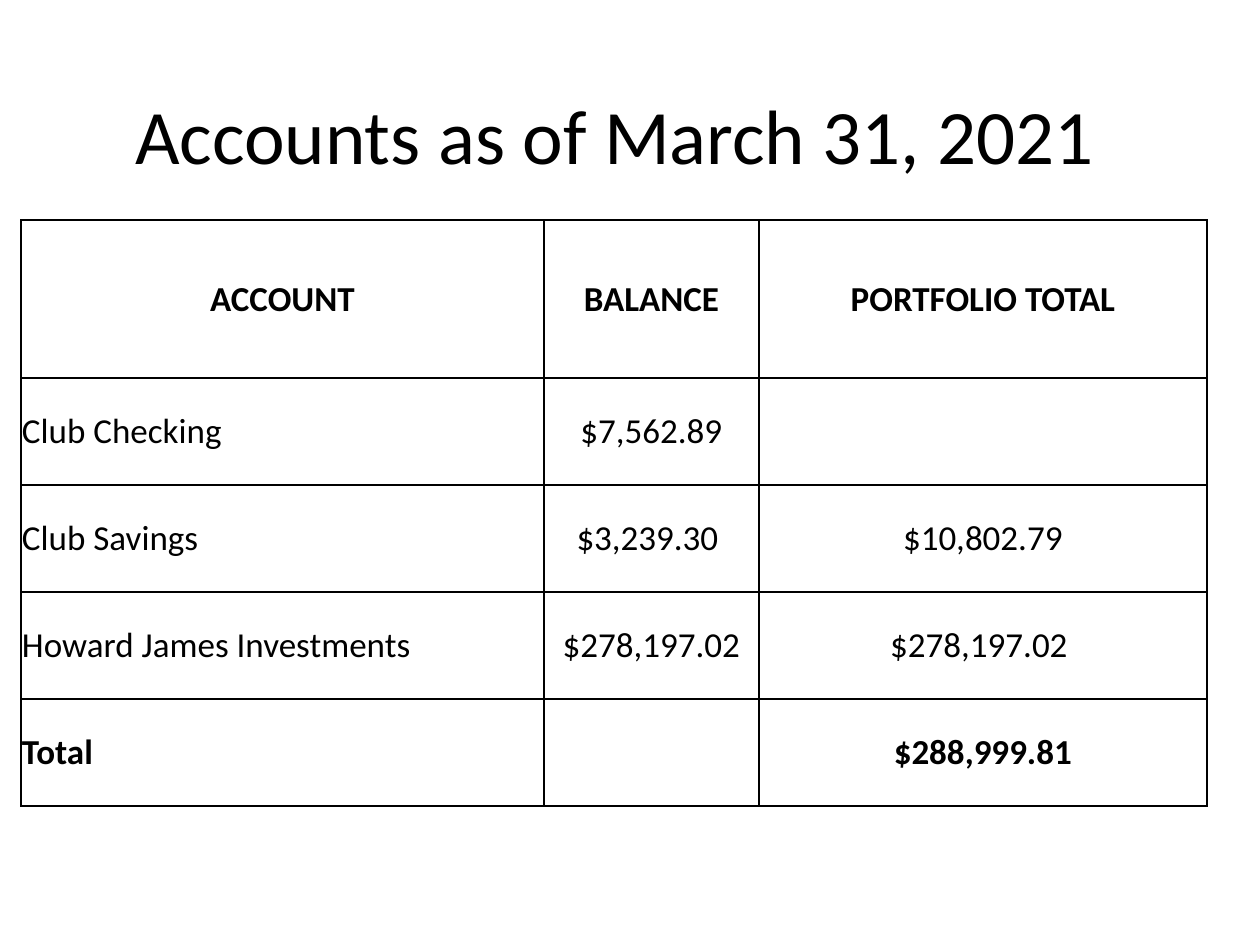
from lxml import etree
from pptx import Presentation
from pptx.dml.color import RGBColor
from pptx.enum.text import MSO_ANCHOR, PP_ALIGN
from pptx.oxml.ns import qn
from pptx.util import Emu, Pt

BLACK = RGBColor(0, 0, 0)
FONT = "Calibri"
MIDDLE = MSO_ANCHOR.MIDDLE
LEFT, CENTER = PP_ALIGN.LEFT, PP_ALIGN.CENTER


def px(n):
    return Emu(round(n * 914400 / 126))


def style(para, size, bold, align):
    para.alignment = align
    para.font.name = FONT
    para.font.size = Pt(size)
    para.font.bold = bold
    para.font.color.rgb = BLACK


prs = Presentation()
prs.slide_width, prs.slide_height = px(1260), px(945)
slide = prs.slides.add_slide(prs.slide_layouts[6])

# Title
box = slide.shapes.add_textbox(px(33), px(47), px(1164), px(173))
frame = box.text_frame
frame.word_wrap = True
frame.vertical_anchor = MIDDLE
frame.text = "Accounts as of March 31, 2021"
style(frame.paragraphs[0], 44, False, CENTER)

# Table grid
ROWS = [
    ("ACCOUNT", "BALANCE", "PORTFOLIO TOTAL"),
    ("Club Checking", "$7,562.89", ""),
    ("Club Savings", "$3,239.30 ", "$10,802.79"),
    ("Howard James Investments", "$278,197.02", "$278,197.02 "),
    ("Total", "", "$288,999.81"),
]
WIDTHS = [523, 215, 448]
HEIGHTS = [158] + [107] * 4
table = slide.shapes.add_table(
    len(ROWS), len(WIDTHS), px(21), px(220), px(sum(WIDTHS)), px(sum(HEIGHTS))
).table
table.first_row = table.horz_banding = False
for col, width in zip(table.columns, WIDTHS):
    col.width = px(width)
for row, height in zip(table.rows, HEIGHTS):
    row.height = px(height)

# Cells: text, then thin black borders
for r, texts in enumerate(ROWS):
    for c, text in enumerate(texts):
        cell = table.cell(r, c)
        cell.text = text
        cell.vertical_anchor = MIDDLE
        cell.margin_left = cell.margin_right = cell.margin_top = px(1)
        cell.margin_bottom = 0
        bold = r in (0, len(ROWS) - 1)
        align = LEFT if c == 0 and r > 0 else CENTER
        style(cell.text_frame.paragraphs[0], 20, bold, align)
        props = cell._tc.get_or_add_tcPr()
        for side in ("a:lnL", "a:lnR", "a:lnT", "a:lnB"):
            line = etree.SubElement(props, qn(side), w=str(Pt(1)))
            fill = etree.SubElement(line, qn("a:solidFill"))
            etree.SubElement(fill, qn("a:srgbClr"), val=str(BLACK))
        cell.fill.background()

prs.save("out.pptx")
